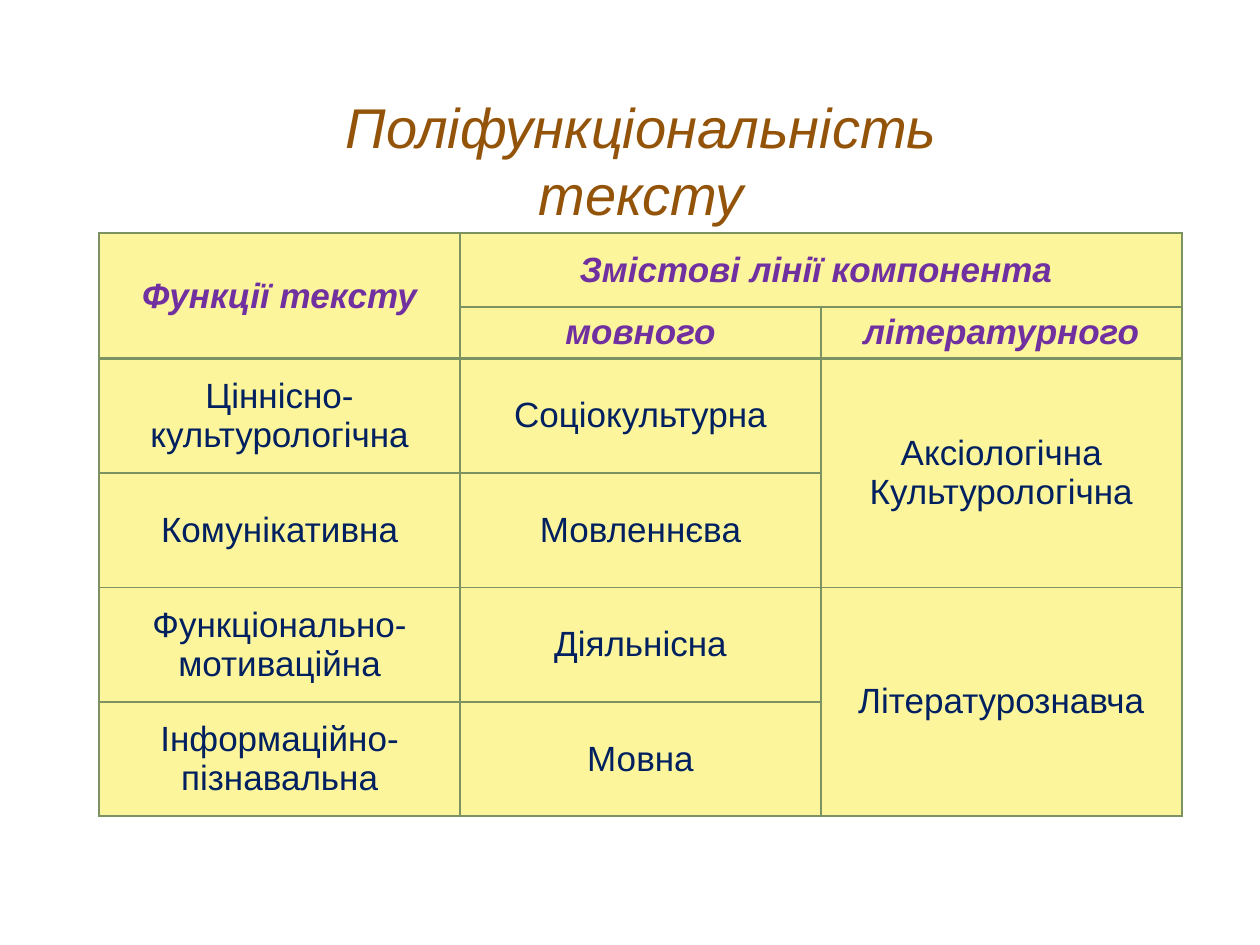
from lxml import etree
from pptx import Presentation
from pptx.dml.color import RGBColor
from pptx.enum.text import MSO_ANCHOR, MSO_AUTO_SIZE, PP_ALIGN
from pptx.oxml.ns import qn
from pptx.util import Pt

CENTER = PP_ALIGN.CENTER
TOP, MIDDLE = MSO_ANCHOR.TOP, MSO_ANCHOR.MIDDLE
NO_AUTOFIT = MSO_AUTO_SIZE.NONE

BROWN = RGBColor(0x93, 0x54, 0x09)
PURPLE = RGBColor(0x70, 0x30, 0xA0)
NAVY = RGBColor(0x00, 0x20, 0x60)
YELLOW = RGBColor(0xFD, 0xF5, 0x9C)
OLIVE = RGBColor(0x7C, 0x92, 0x63)

TITLE_ONLY = 5
HEADER_ROWS = 2
COLUMN_WIDTH = 206.2
ROW_HEIGHTS = [42, 28] + [65.4] * 4
THICK, THIN = 1.5, 1

# Each entry lists its paragraphs; None marks a cell covered by a merge.
CELLS = [
    [["Функції тексту"], ["Змістові лінії компонента "], None],
    [None, ["мовного"], ["літературного"]],
    [["Ціннісно-культурологічна"], ["Соціокультурна"],
     ["Аксіологічна", "Культурологічна"]],
    [["Комунікативна"], ["Мовленнєва"], None],
    [["Функціонально-мотиваційна"], ["Діяльнісна"], ["Літературознавча"]],
    [["Інформаційно-пізнавальна"], ["Мовна"], None],
]
MERGES = [((0, 0), (1, 0)), ((0, 1), (0, 2)), ((2, 2), (3, 2)), ((4, 2), (5, 2))]


class SlideBuilder:
    font_name = "Arial"
    title_size = 32
    cell_size = 20

    def __init__(self, slide):
        self.slide = slide

    def add_lines(self, text_frame, lines, size, color, bold=False, italic=False):
        for index, line in enumerate(lines):
            paragraph = text_frame.paragraphs[0] if index == 0 else text_frame.add_paragraph()
            paragraph.alignment = CENTER
            run = paragraph.add_run()
            run.text = line
            font = run.font
            font.name, font.size = self.font_name, Pt(size)
            font.bold, font.italic = bold, italic
            font.color.rgb = color

    def title(self, text, left, top, width, height):
        shape = self.slide.shapes.title
        shape.left, shape.top = Pt(left), Pt(top)
        shape.width, shape.height = Pt(width), Pt(height)
        text_frame = shape.text_frame
        text_frame.word_wrap = True
        text_frame.auto_size = NO_AUTOFIT
        text_frame.vertical_anchor = TOP
        self.add_lines(text_frame, [text], self.title_size, BROWN, italic=True)

    def border(self, cell, side, width):
        properties = cell._tc.get_or_add_tcPr()
        line = etree.SubElement(properties, qn(f"a:ln{side}"), w=str(Pt(width)))
        fill = etree.SubElement(line, qn("a:solidFill"))
        etree.SubElement(fill, qn("a:srgbClr"), val=str(OLIVE))

    def table(self, left, top):
        row_count, column_count = len(CELLS), len(CELLS[0])
        frame = self.slide.shapes.add_table(
            row_count, column_count, Pt(left), Pt(top),
            Pt(COLUMN_WIDTH * column_count), Pt(sum(ROW_HEIGHTS)))
        table = frame.table
        table.first_row = table.horz_banding = False
        for column in table.columns:
            column.width = Pt(COLUMN_WIDTH)
        for row, height in zip(table.rows, ROW_HEIGHTS):
            row.height = Pt(height)
        for first, last in MERGES:
            table.cell(*first).merge(table.cell(*last))
        for row_index, row in enumerate(CELLS):
            for column_index, lines in enumerate(row):
                self.cell(table.cell(row_index, column_index), row_index, lines)

    def cell(self, cell, row_index, lines):
        is_header = row_index < HEADER_ROWS
        top_width = THIN if row_index > HEADER_ROWS else THICK
        bottom_width = THICK if is_header or row_index == len(CELLS) - 1 else THIN
        for side, width in zip("LRTB", (THICK, THICK, top_width, bottom_width)):
            self.border(cell, side, width)
        cell.fill.solid()
        cell.fill.fore_color.rgb = YELLOW
        cell.vertical_anchor = MIDDLE
        if lines:
            color = PURPLE if is_header else NAVY
            self.add_lines(cell.text_frame, lines, self.cell_size, color, is_header, is_header)


def main():
    presentation = Presentation()
    presentation.slide_width, presentation.slide_height = Pt(720), Pt(540)
    slide = presentation.slides.add_slide(presentation.slide_layouts[TITLE_ONLY])
    builder = SlideBuilder(slide)
    builder.title("Поліфункціональність тексту", 180, 49, 373, 128)
    builder.table(56.7, 133.3)
    presentation.save("out.pptx")


if __name__ == "__main__":
    main()
